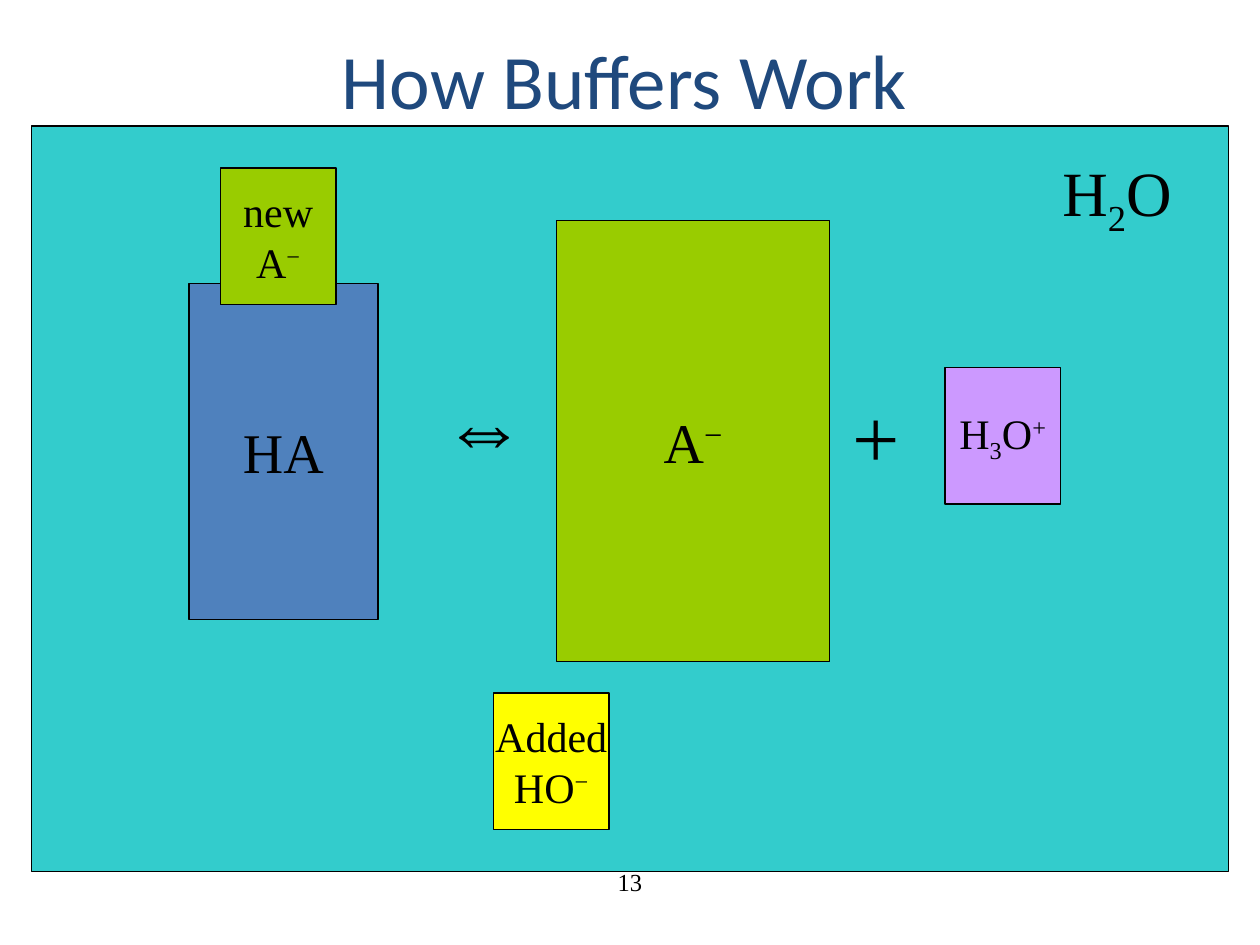
from pptx import Presentation
from pptx.dml.color import RGBColor
from pptx.enum.shapes import MSO_SHAPE
from pptx.enum.text import MSO_ANCHOR, PP_ALIGN
from pptx.util import Pt

RECTANGLE = MSO_SHAPE.RECTANGLE
TOP, MIDDLE = MSO_ANCHOR.TOP, MSO_ANCHOR.MIDDLE
LEFT, CENTER = PP_ALIGN.LEFT, PP_ALIGN.CENTER
SERIF = "Times New Roman"
BLACK = "000000"
SUB, SUPER = -25000, 30000


def color(hex_string):
    return RGBColor.from_string(hex_string)


def write(shape, lines, size, font=SERIF, ink=BLACK, align=CENTER, anchor=MIDDLE, wrap=False):
    """Each line is a list of (text, baseline shift) runs."""
    frame = shape.text_frame
    frame.word_wrap = wrap
    frame.vertical_anchor = anchor
    for number, line in enumerate(lines):
        paragraph = frame.add_paragraph() if number else frame.paragraphs[0]
        paragraph.alignment = align
        for text, baseline in line:
            run = paragraph.add_run()
            run.text = text
            run.font.size = Pt(size)
            run.font.name = font
            run.font.color.rgb = color(ink)
            if baseline:
                run._r.get_or_add_rPr().set("baseline", str(baseline))


prs = Presentation()
prs.slide_width, prs.slide_height = Pt(720), Pt(540)
slide = prs.slides.add_slide(prs.slide_layouts[6])
shapes = slide.shapes

# Slide number
page_number = shapes.add_textbox(Pt(246), Pt(492), Pt(228), Pt(36))
write(page_number, [[("13", 0)]], 14, anchor=TOP, wrap=True)

# Water background, then the species; area stands for amount
species = [
    # left, top, width, height, fill, text size, lines
    (18, 72, 684, 426, "33CCCC", 36, []),
    (108, 162, 108, 192, "4F81BD", 32, [[("HA", 0)]]),
    (540, 210, 66, 78, "CC99FF", 24, [[("H", 0), ("3", SUB), ("O", 0), ("+", SUPER)]]),
    (282, 396, 66, 78, "FFFF00", 24, [[("Added", 0)], [("HO", 0), ("−", SUPER)]]),
    (126, 96, 66, 78, "99CC00", 24, [[("new", 0)], [("A", 0), ("−", SUPER)]]),
    (318, 126, 156, 252, "99CC00", 32, [[("A", 0), ("−", SUPER)]]),
]
for left, top, width, height, fill, size, lines in species:
    box = shapes.add_shape(RECTANGLE, Pt(left), Pt(top), Pt(width), Pt(height))
    box.shadow.inherit = False
    box.fill.solid()
    box.fill.fore_color.rgb = color(fill)
    box.line.color.rgb = color(BLACK)
    box.line.width = Pt(0.75)
    write(box, lines, size)

# Water label and the signs of the equilibrium
labels = [
    # left, top, width, height, text size, runs
    (600, 84, 78.5, 50.5, 36, [("H", 0), ("2", SUB), ("O", 0)]),
    (246, 210, 65, 65, 48, [("⇔", 0)]),
    (480, 216, 42, 65, 48, [("+", 0)]),
]
for left, top, width, height, size, runs in labels:
    label = shapes.add_textbox(Pt(left), Pt(top), Pt(width), Pt(height))
    write(label, [runs], size, align=LEFT, anchor=TOP)

# Title
title = shapes.add_textbox(Pt(24), Pt(0), Pt(666), Pt(90))
write(title, [[("How Buffers Work", 0)]], 44, font="Calibri", ink="1F497D", wrap=True)

prs.save("out.pptx")
